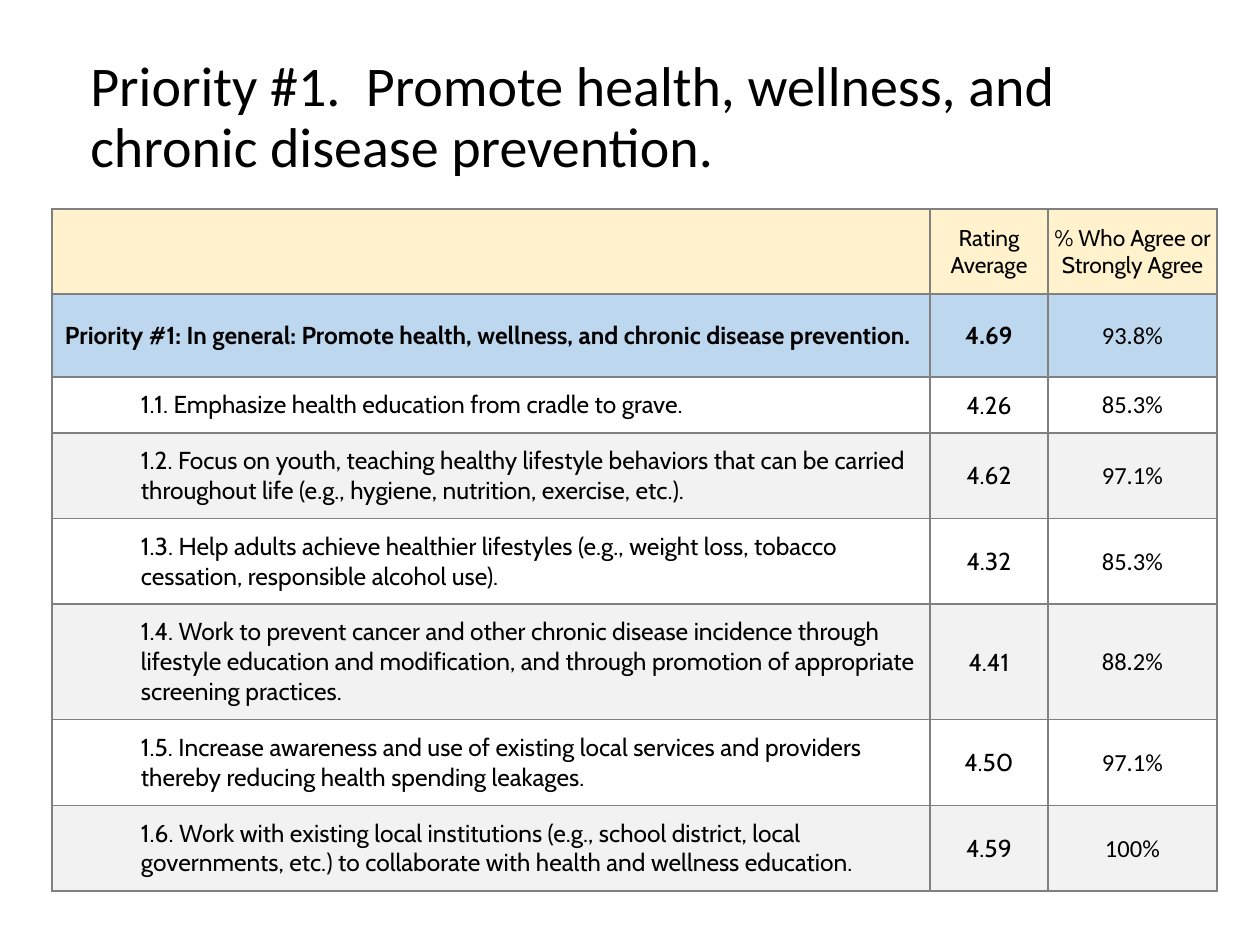
from lxml.etree import SubElement
from pptx import Presentation
from pptx.dml.color import RGBColor as Rgb
from pptx.enum.text import MSO_ANCHOR as Anchor, PP_ALIGN as Align
from pptx.oxml.ns import qn
from pptx.util import Pt

SCALE = 914400 / 126
COLORS = {
    "text": "000000",
    "line": "808080",
    "head": "FFF2CC",
    "main": "BDD7EE",
    "odd": "FFFFFF",
    "even": "F2F2F2",
}
TITLE = "Priority #1.  Promote health, wellness, and chronic disease prevention."
HEADS = ["", "Rating Average", "% Who Agree or Strongly Agree"]
MAIN = ["Priority #1: In general: Promote health, wellness, and chronic disease "
        "prevention.", "4.69", "93.8%"]
GOALS = [
    ["1.1. Emphasize health education from cradle to grave.", "4.26", "85.3%"],
    ["1.2. Focus on youth, teaching healthy lifestyle behaviors that can be carried "
     "throughout life (e.g., hygiene, nutrition, exercise, etc.).", "4.62", "97.1%"],
    ["1.3. Help adults achieve healthier lifestyles (e.g., weight loss, tobacco "
     "cessation, responsible alcohol use).", "4.32", "85.3%"],
    ["1.4. Work to prevent cancer and other chronic disease incidence through "
     "lifestyle education and modification, and through promotion of appropriate "
     "screening practices.", "4.41", "88.2%"],
    ["1.5. Increase awareness and use of existing local services and providers "
     "thereby reducing health spending leakages.", "4.50", "97.1%"],
    ["1.6. Work with existing local institutions (e.g., school district, local "
     "governments, etc.) to collaborate with health and wellness education.",
     "4.59", "100%"],
]
COLS = [878, 118, 169]
ROWS = [85, 83, 55, 85, 85, 114, 85, 85]


def px(n):
    return round(n * SCALE)


def style(para, size, face, bold=False):
    for run in para.runs:
        font = run.font
        font.size, font.name, font.bold = Pt(size), face, bold
        font.color.rgb = Rgb.from_string(COLORS["text"])


def add_title(slide, left, top, width, height):
    box = slide.shapes.add_textbox(px(left), px(top), px(width), px(height))
    frame = box.text_frame
    frame.word_wrap = True
    frame.text = TITLE
    para = frame.paragraphs[0]
    para.line_spacing = 0.9
    style(para, 32, "Calibri")


def set_edges(cell):
    props = cell._tc.get_or_add_tcPr()
    for side in ("lnL", "lnR", "lnT", "lnB"):
        line = SubElement(props, qn(f"a:{side}"), w=str(Pt(1)))
        fill = SubElement(line, qn("a:solidFill"))
        SubElement(fill, qn("a:srgbClr"), val=COLORS["line"])


def fill_cell(cell, text, row, col):
    set_edges(cell)
    tone = ("head", "main")[row] if row < 2 else ("odd", "even")[row % 2]
    cell.fill.solid()
    cell.fill.fore_color.rgb = Rgb.from_string(COLORS[tone])
    cell.vertical_anchor = Anchor.MIDDLE
    wide = col == 0 and row > 0
    side = px(13 if wide else 1)
    cell.margin_left = cell.margin_right = cell.margin_top = side
    cell.margin_bottom = side if wide else 0

    cell.text_frame.text = text
    para = cell.text_frame.paragraphs[0]
    if col:
        para.alignment = Align.CENTER
    elif row > 1:
        para._p.get_or_add_pPr().set("marL", str(px(76)))
    face = "Calibri" if col == 2 and row else "Cabin"
    style(para, 14 if row else 13, face, bold=row == 1 and col < 2)


def add_ratings(slide, left, top):
    data = [HEADS, MAIN, *GOALS]
    shape = slide.shapes.add_table(len(ROWS), len(COLS), px(left), px(top),
                                   px(sum(COLS)), px(sum(ROWS)))
    table = shape.table
    table.first_row = table.horz_banding = False
    for col, width in zip(table.columns, COLS):
        col.width = px(width)
    for row, height in zip(table.rows, ROWS):
        row.height = px(height)
    for r, texts in enumerate(data):
        for c, text in enumerate(texts):
            fill_cell(table.cell(r, c), text, r, c)


def main():
    deck = Presentation()
    deck.slide_width, deck.slide_height = px(1260), px(945)
    slide = deck.slides.add_slide(deck.slide_layouts[6])
    add_ratings(slide, 52, 209)
    add_title(slide, 78, 52, 1086, 134)
    deck.save("out.pptx")


if __name__ == "__main__":
    main()
